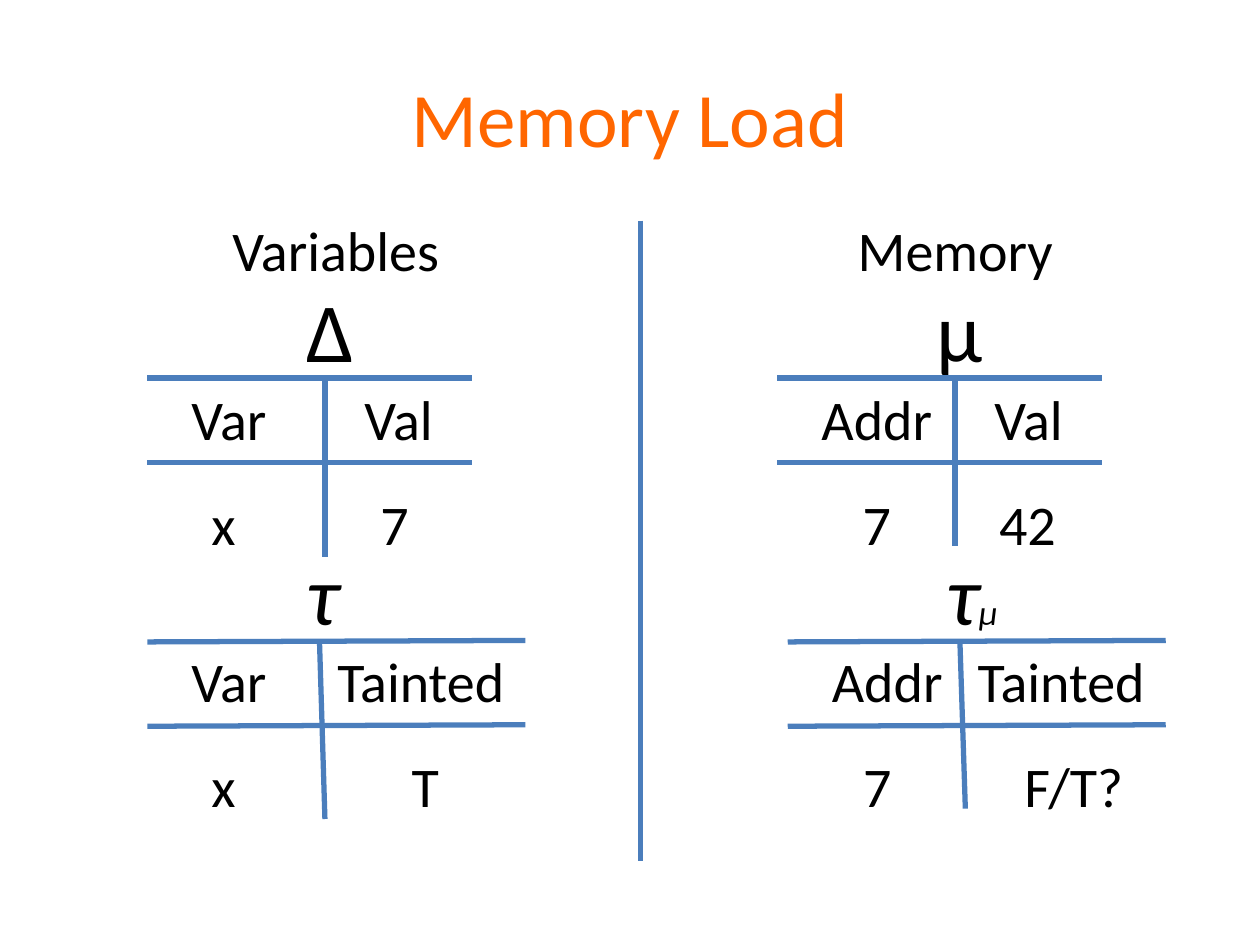
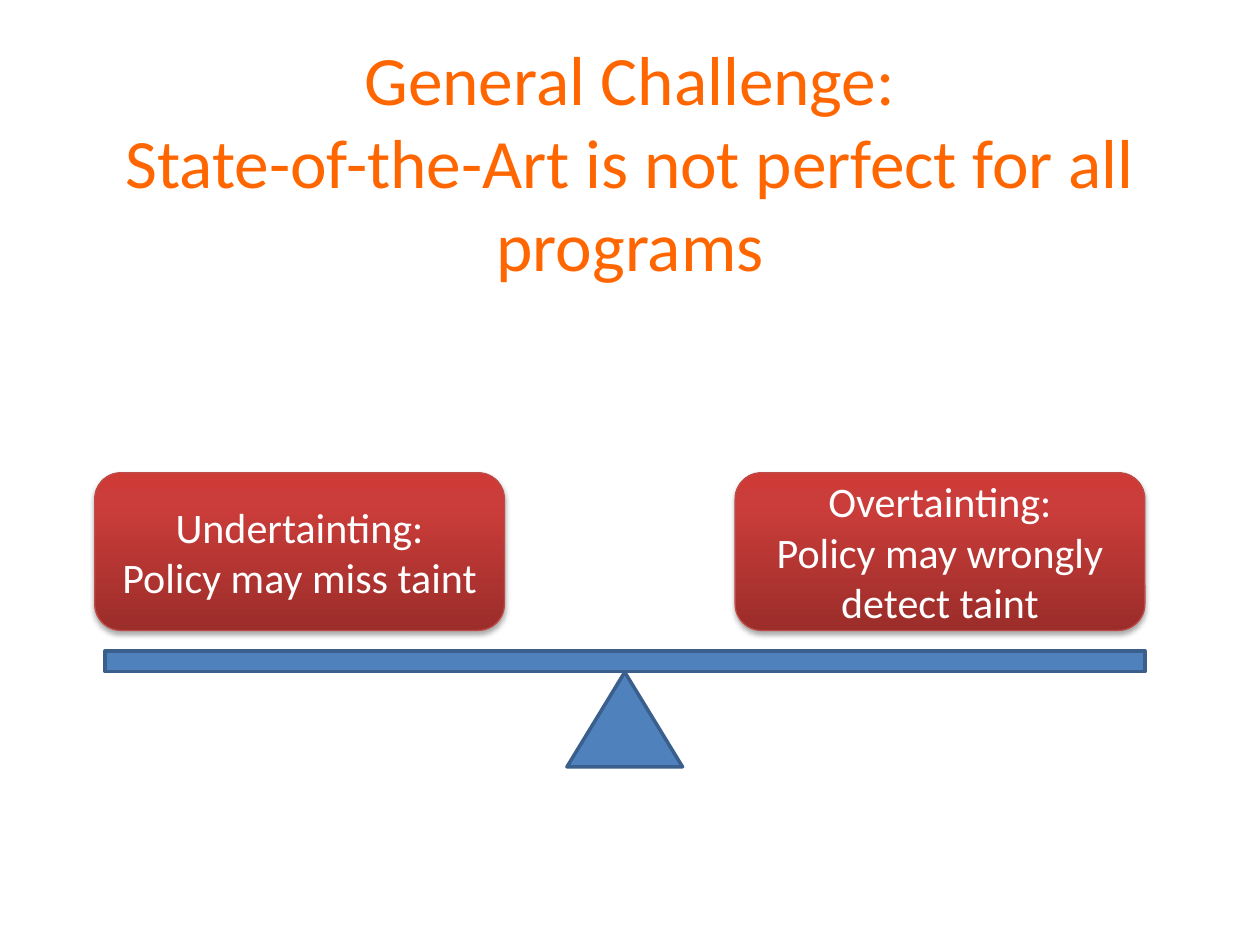
from lxml.etree import SubElement as Sub
from pptx import Presentation
from pptx.dml.color import RGBColor as Rgb
from pptx.enum.shapes import MSO_CONNECTOR as Link, MSO_SHAPE as Form
from pptx.enum.text import MSO_ANCHOR as Anchor, MSO_AUTO_SIZE as Fit, PP_ALIGN as Align
from pptx.oxml.ns import qn
from pptx.util import Cm, Pt

COLORS = {
    "title": "FF6600", "text": "000000", "light": "FFFFFF",
    "rule": "4B7EBC", "blue": "4F81BD", "edge": "3A5F8C",
    "rim": "BE4B48", "shade": "000000",
    "low": "9B2D2A", "mid": "CB3D3A", "high": "CE3B37",
}
FONT = "Calibri"
BODY, SIGN = 32, 48
ROW, HEAD = 2.12, 1.7


def color(name):
    return Rgb.from_string(COLORS[name])


class Deck:
    def __init__(self):
        self.prs = Presentation()
        self.prs.slide_width, self.prs.slide_height = Cm(25.4), Cm(19.05)

    def slide(self, title, height, size):
        layout = self.prs.slide_layouts[5]
        page = self.prs.slides.add_slide(layout)
        self.shapes = page.shapes
        box = page.shapes.title
        box.left, box.top = Cm(1.27), Cm(0.76)
        box.width, box.height = Cm(22.86), Cm(height)
        box.text_frame.auto_size = Fit.NONE
        self.put(box, [(title, size)], "title", Align.CENTER, Anchor.MIDDLE)

    def put(self, shape, runs, ink, align, anchor=Anchor.TOP, italic=False):
        """Fill a shape with (text, size) runs; a newline is a line break."""
        frame = shape.text_frame
        frame.word_wrap = True
        frame.vertical_anchor = anchor
        para = frame.paragraphs[0]
        para.alignment = align
        for text, size in runs:
            for i, line in enumerate(text.split("\n")):
                if i:
                    para.add_line_break()
                run = para.add_run()
                run.text = line
                font = run.font
                font.name, font.size, font.italic = FONT, Pt(size), italic
                font.color.rgb = color(ink)

    def label(self, runs, x, y, width, align=Align.LEFT, italic=False, where=None):
        height = 1.63 if runs[0][1] == BODY else 2.31
        box = (where or self.shapes).add_textbox(Cm(x), Cm(y), Cm(width), Cm(height))
        self.put(box, runs, "text", align, italic=italic)

    def rule(self, x1, y1, x2, y2, where=None):
        line = (where or self.shapes).add_connector(
            Link.STRAIGHT, Cm(x1), Cm(y1), Cm(x2), Cm(y2))
        line.line.color.rgb = color("rule")
        line.line.width = Pt(3)
        Sub(line.element.spPr, qn("a:effectLst"))

    def grid(self, left, top, width, stem, slant, sign, cells, italic=False):
        """Draw a ruled two-column grid with its sign above; slant tilts the rules."""
        group = self.shapes.add_group_shape().shapes
        self.label(sign, left + 2.95, top - ROW, 1.7, italic=italic, where=group)
        for i, (text, x, wide, align) in enumerate(cells):
            y = top + i // 2 * ROW
            self.label([(text, BODY)], left + x, y, wide, align, where=group)
        sag = 0.03 if slant else 0
        for y in (top, top + HEAD):
            self.rule(left, y + sag, left + width, y, group)
        mid = left + 3.58
        self.rule(mid - slant, top, mid, top + stem, group)

    def solid(self, form, x, y, width, height):
        shape = self.form(form, x, y, width, height, "edge", 2)
        shape.fill.solid()
        shape.fill.fore_color.rgb = color("blue")

    def form(self, form, x, y, width, height, edge, weight):
        shape = self.shapes.add_shape(form, Cm(x), Cm(y), Cm(width), Cm(height))
        shape.shadow.inherit = False
        shape.line.color.rgb = color(edge)
        shape.line.width = Pt(weight)
        return shape

    def card(self, text, x):
        """Add a red rounded card with a gradient and a soft shadow."""
        shape = self.form(Form.ROUNDED_RECTANGLE, x, 9.53, 8.26, 3.18, "rim", 0.75)
        shape.fill.gradient()
        shape.fill.gradient_angle = 90
        props = shape.element.spPr
        stops = props.find(qn("a:gradFill")).find(qn("a:gsLst"))
        for old in list(stops):
            stops.remove(old)
        for name, pos in (("low", 0), ("mid", 80), ("high", 100)):
            stop = Sub(stops, qn("a:gs"), pos=str(pos * 1000))
            Sub(stop, qn("a:srgbClr"), val=COLORS[name])
        cast = Sub(props.find(qn("a:effectLst")), qn("a:outerShdw"),
                   blurRad=str(Pt(3.1)), dist=str(Pt(1.8)), dir="5400000", rotWithShape="0")
        tint = Sub(cast, qn("a:srgbClr"), val=COLORS["shade"])
        Sub(tint, qn("a:alpha"), val="35000")
        self.put(shape, [(text, 24)], "light", Align.CENTER, Anchor.MIDDLE)


def load(deck):
    deck.slide("Memory Load", 3.18, 44)
    for text, x in (("Variables", 4.02), ("Memory", 16.51)):
        deck.label([(text, BODY)], x, 4.23, 5.5, Align.CENTER)
    left, mid = Align.LEFT, Align.CENTER
    var, addr = ("Var", 0.64, 2.75, left), ("Addr", 0.64, 2.75, left)
    val, taint = ("Val", 3.58, 2.97, mid), ("Tainted", 3.58, 4.45, left)
    name = ("x", 1.04, 1.07, left)
    deck.grid(2.97, 7.62, 6.55, 3.6, 0, [("Δ", SIGN)],
              [var, val, name, ("7", 4.45, 1.07, left)])
    deck.grid(2.97, 12.91, 7.62, 3.6, 0.11, [("τ", SIGN)],
              [var, taint, name, ("T", 5.08, 1.07, left)], italic=True)
    deck.grid(15.67, 7.62, 6.55, 3.39, 0, [("μ", SIGN)],
              [addr, val, ("7", 1.47, 1.07, left), ("42", 4.22, 1.7, left)])
    deck.grid(15.88, 12.91, 7.62, 3.39, 0.11, [("τ", SIGN), ("μ", 20)],
              [addr, taint, ("7", 1.27, 1.07, left), ("F/T?", 4.52, 3.18, left)],
              italic=True)
    deck.rule(12.91, 4.45, 12.91, 17.36)


def balance(deck):
    deck.slide("General Challenge:\nState-of-the-Art is not perfect for all programs",
               4.95, 39.6)
    deck.solid(Form.ISOSCELES_TRIANGLE, 11.43, 13.55, 2.33, 1.91)
    deck.solid(Form.RECTANGLE, 2.12, 13.12, 20.96, 0.42)
    deck.card("Undertainting:\nPolicy may miss taint", 1.91)
    deck.card("Overtainting:\nPolicy may wrongly detect taint", 14.82)


def main():
    deck = Deck()
    load(deck)
    balance(deck)
    deck.prs.save("out.pptx")


if __name__ == "__main__":
    main()
